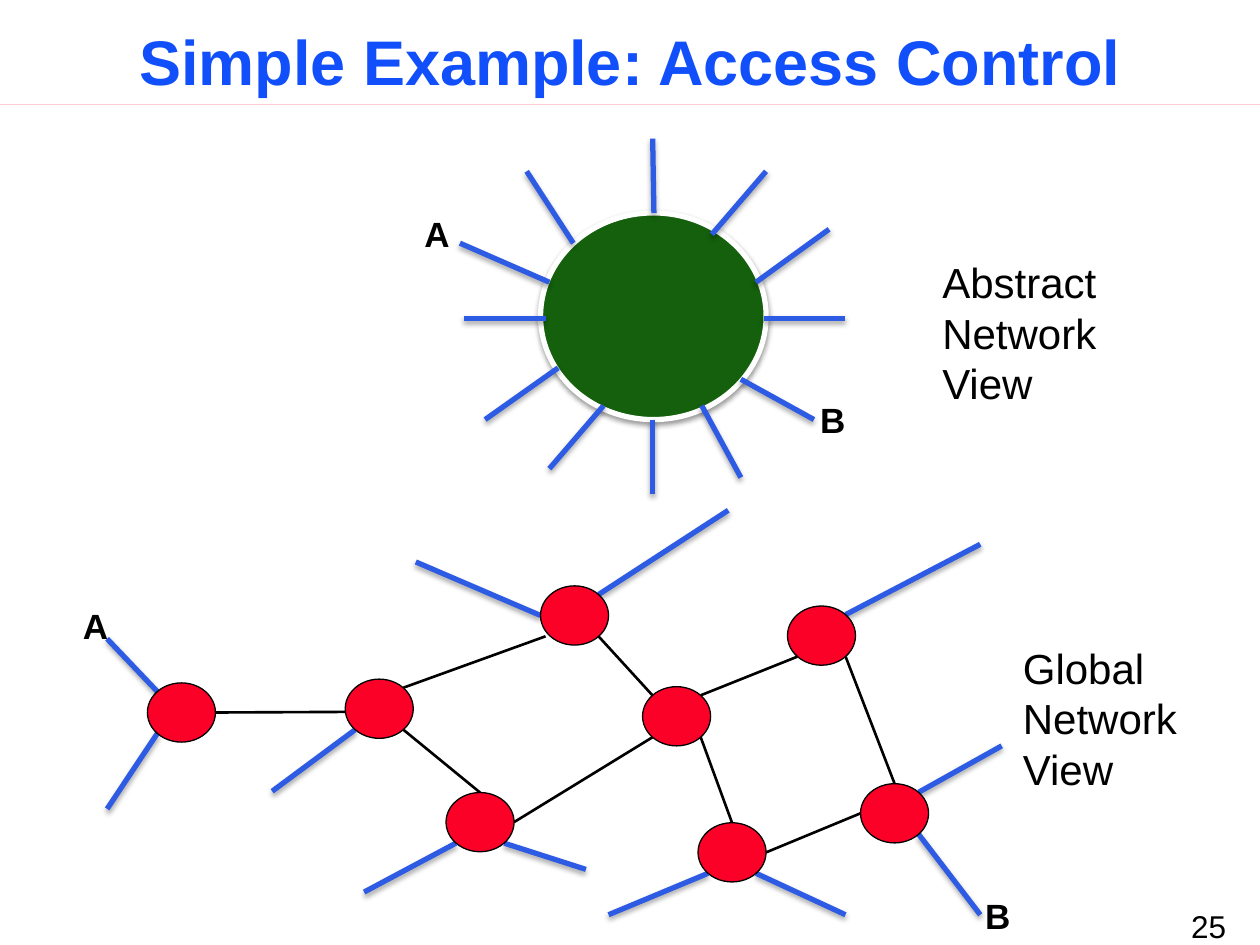
from lxml import etree
from pptx import Presentation
from pptx.dml.color import RGBColor
from pptx.enum.shapes import MSO_CONNECTOR, MSO_SHAPE
from pptx.enum.text import MSO_ANCHOR, MSO_AUTO_SIZE, PP_ALIGN
from pptx.oxml.ns import qn
from pptx.util import Inches, Pt

STRAIGHT, ELLIPSE = MSO_CONNECTOR.STRAIGHT, MSO_SHAPE.OVAL
LEFT, CENTER, RIGHT = PP_ALIGN.LEFT, PP_ALIGN.CENTER, PP_ALIGN.RIGHT
BOTTOM, FIT_SHAPE = MSO_ANCHOR.BOTTOM, MSO_AUTO_SIZE.SHAPE_TO_FIT_TEXT

BLACK = RGBColor(0x00, 0x00, 0x00)
WHITE = RGBColor(0xFF, 0xFF, 0xFF)
TITLE_BLUE = RGBColor(0x11, 0x4F, 0xFB)
PORT_BLUE = RGBColor(0x2D, 0x5B, 0xE3)
SWITCH_RED = RGBColor(0xFC, 0x01, 0x28)
HUB_GREEN = RGBColor(0x14, 0x60, 0x0C)
RULE_PINK = RGBColor(0xFF, 0xCC, 0xD4)

# Content: inches throughout
TITLE = "Simple Example: Access Control"
PAGE_NUMBER = "25"
ABSTRACT_TEXT = ["Abstract Network", "View"]
GLOBAL_TEXT = ["Global", "Network View"]
HOST_LABELS = [("A", 0.56, 4.75), ("B", 7.72, 7.05),
               ("A", 3.27, 1.64), ("B", 6.41, 3.11)]

HUB = (4.29, 1.69, 1.79, 1.64)
HUB_PORTS = [  # end at the hub, outer end
    ((5.65, 1.86), (6.08, 1.36)), ((5.19, 1.69), (5.18, 1.10)),
    ((6.00, 2.24), (6.58, 1.82)), ((6.06, 2.53), (6.71, 2.53)),
    ((4.55, 1.93), (4.18, 1.36)), ((4.36, 2.24), (3.65, 1.93)),
    ((4.33, 2.53), (3.68, 2.53)), ((5.18, 3.33), (5.18, 3.92)),
    ((5.88, 3.01), (6.46, 3.33)), ((5.57, 3.22), (5.88, 3.79)),
    ((4.79, 3.22), (4.36, 3.72)), ((4.43, 2.92), (3.85, 3.33)),
]

SWITCH_W, SWITCH_H = 0.54, 0.47
SWITCHES = {  # left, top
    "s1": (1.17, 5.42), "s2": (2.74, 5.39), "s3": (4.29, 4.65),
    "s4": (3.54, 6.29), "s5": (5.10, 5.45), "s6": (5.54, 6.53),
    "s7": (6.25, 4.81), "s8": (6.83, 6.22),
}
# An end is a (switch, side) pair or a plain point
LINKS = [
    (("s1", "E"), (2.74, 5.65)), (("s2", "NE"), (4.33, 5.05)),
    (("s2", "SE"), ("s4", "N")), (("s3", "SE"), ("s5", "NW")),
    (("s4", "E"), ("s5", "SW")), (("s5", "NE"), ("s7", "SW")),
    (("s5", "SE"), ("s6", "N")), (("s6", "E"), ("s8", "W")),
    (("s7", "SE"), ("s8", "N")),
]
SWITCH_PORTS = [
    (("s1", "NW"), (0.85, 5.07)), (("s1", "SW"), (0.85, 6.42)),
    (("s2", "SW"), (2.16, 6.28)), (("s3", "W"), (3.30, 4.46)),
    (("s3", "NE"), (5.78, 4.05)), (("s4", "SW"), (2.89, 7.08)),
    (("s4", "SE"), (4.65, 6.90)), (("s6", "SW"), (4.83, 7.26)),
    (("s6", "SE"), (6.71, 7.26)), (("s7", "NE"), (7.78, 4.32)),
    (("s8", "NE"), (7.95, 5.92)), (("s8", "SE"), (7.78, 7.26)),
]


def resolve(end):
    """Point of a line end; diagonal sides lie at 45 degrees on the ellipse."""
    if end[0] not in SWITCHES:
        return end
    switch, side = end
    left, top = SWITCHES[switch]
    reach = 0.71 if len(side) == 2 else 1
    dx = ("E" in side) - ("W" in side)
    dy = ("S" in side) - ("N" in side)
    return (left + SWITCH_W / 2 * (1 + dx * reach),
            top + SWITCH_H / 2 * (1 + dy * reach))


def add_effects(shape, shadow=None):
    """Replace theme effects; shadow is (opacity %, blur pt, distance pt)."""
    effects = etree.SubElement(shape._element.spPr, qn("a:effectLst"))
    if shadow:
        opacity, blur, distance = shadow
        outer = etree.SubElement(
            effects, qn("a:outerShdw"), blurRad=str(Pt(blur)),
            dist=str(Pt(distance)), dir="5400000", rotWithShape="0")
        color = etree.SubElement(outer, qn("a:srgbClr"), val=str(BLACK))
        etree.SubElement(color, qn("a:alpha"), val=str(opacity * 1000))


def add_line(shapes, start, end, color, width, shadow=None):
    points = [Inches(v) for v in (*resolve(start), *resolve(end))]
    line = shapes.add_connector(STRAIGHT, *points)
    line.line.color.rgb = color
    line.line.width = Pt(width)
    add_effects(line, shadow)


def add_ellipse(shapes, box, fill, outline, width, shadow=None):
    ellipse = shapes.add_shape(ELLIPSE, *map(Inches, box))
    ellipse.fill.solid()
    ellipse.fill.fore_color.rgb = fill
    ellipse.line.color.rgb = outline
    ellipse.line.width = Pt(width)
    add_effects(ellipse, shadow)


def write(frame, lines, size, bold=False, color=BLACK, align=LEFT):
    frame.word_wrap = True
    frame.text = "\n".join(lines)
    formats = {"name": "Arial", "size": Pt(size), "bold": bold}
    for paragraph in frame.paragraphs:
        paragraph.alignment = align
        for run in paragraph.runs:
            for key, value in formats.items():
                setattr(run.font, key, value)
            run.font.color.rgb = color


def add_text(shapes, box, lines, size, **style):
    frame = shapes.add_textbox(*map(Inches, box)).text_frame
    write(frame, lines, size, **style)
    frame.auto_size = FIT_SHAPE


def main():
    prs = Presentation()
    prs.slide_width, prs.slide_height = Inches(10), Inches(7.5)
    slide = prs.slides.add_slide(prs.slide_layouts[5])
    shapes = slide.shapes
    port_style = (PORT_BLUE, 3, (35, 3.1, 1.8))

    # Title, rule and page number
    title = shapes.title
    title.left, title.top, title.width, title.height = map(
        Inches, (0, 0.17, 10, 0.67))
    write(title.text_frame, [TITLE], 36, bold=True, color=TITLE_BLUE, align=CENTER)
    title.text_frame.vertical_anchor = BOTTOM
    title.text_frame.auto_size = MSO_AUTO_SIZE.NONE
    title.text_frame.paragraphs[0].line_spacing = 0.9
    add_line(shapes, (0, 0.83), (10, 0.83), RULE_PINK, 0.25)
    add_text(shapes, (9.08, 7.15, 0.75, 0.4), [PAGE_NUMBER], 18, align=RIGHT)

    # Global network view
    for start, end in LINKS:
        add_line(shapes, start, end, BLACK, 1.5)
    for start, end in SWITCH_PORTS:
        add_line(shapes, start, end, *port_style)
    for corner in SWITCHES.values():
        add_ellipse(shapes, (*corner, SWITCH_W, SWITCH_H), SWITCH_RED, BLACK, 0.75)
    add_text(shapes, (8.02, 5.05, 1.84, 1.31), GLOBAL_TEXT, 24)

    # Abstract network view
    abstract = shapes.add_group_shape().shapes
    add_ellipse(abstract, HUB, HUB_GREEN, WHITE, 3, (38, 3.1, 1.6))
    for start, end in HUB_PORTS:
        add_line(abstract, start, end, *port_style)
    add_text(abstract, (7.38, 1.99, 2.25, 1.31), ABSTRACT_TEXT, 24)

    # Host labels
    for host, left, top in HOST_LABELS:
        add_text(shapes, (left, top, 0.38, 0.44), [host], 20, bold=True)

    prs.save("out.pptx")


if __name__ == "__main__":
    main()
